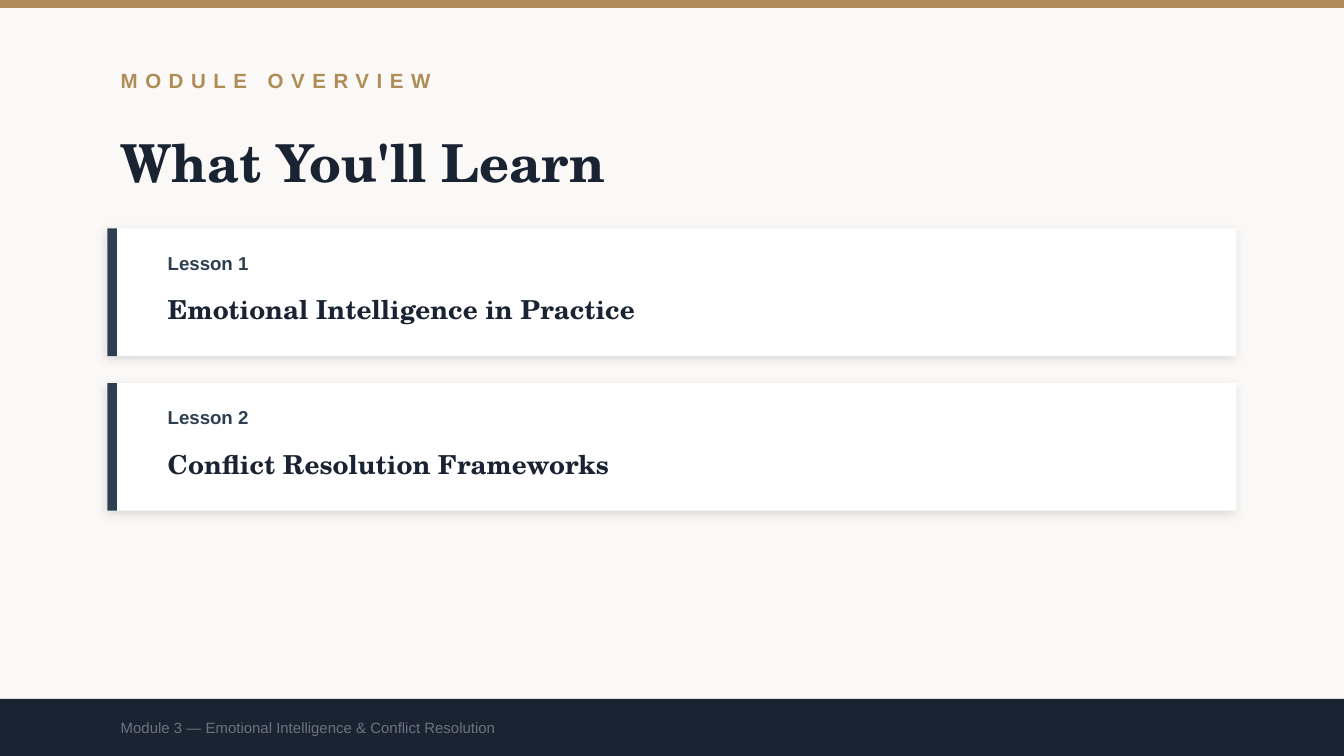
from typing import NamedTuple

import pptx
import pptx.dml.color
import pptx.enum.shapes
import pptx.enum.text
import pptx.oxml
import pptx.oxml.ns
import pptx.util

RGBColor = pptx.dml.color.RGBColor

PX = 4572  # EMU per px, 200 px to the inch
SLIDE_W, SLIDE_H = 2000, 1125
MARGIN = 160
TEXT_W = 1600
CARD_TOP, CARD_W, CARD_H, CARD_GAP = 340, 1680, 190, 40
ACCENT_W = 14
FOOTER_TOP = 1040

CREAM = RGBColor(0xFA, 0xF9, 0xF7)
GOLD = RGBColor(0xB0, 0x8D, 0x57)
NAVY = RGBColor(0x1A, 0x23, 0x32)
SLATE = RGBColor(0x2C, 0x3E, 0x50)
GRAY = RGBColor(0x6B, 0x72, 0x80)
WHITE = RGBColor(0xFF, 0xFF, 0xFF)

SANS = "Arial"
SERIF = "TeX Gyre Schola"


class Box(NamedTuple):
    left: int
    top: int
    width: int
    height: int

    def emu(self) -> list[int]:
        return [v * PX for v in self]


class Lesson(NamedTuple):
    label: str
    title: str


LESSONS = [
    Lesson("Lesson 1", "Emotional Intelligence in Practice"),
    Lesson("Lesson 2", "Conflict Resolution Frameworks"),
]


def add_rect(slide, box: Box, color: RGBColor):
    s = slide.shapes.add_shape(pptx.enum.shapes.MSO_SHAPE.RECTANGLE, *box.emu())
    s.fill.solid()
    s.fill.fore_color.rgb = color
    s.line.fill.background()
    s.shadow.inherit = False
    return s


def add_soft_shadow(s) -> None:
    """Give the shape a faint black shadow: 6 pt blur, 2 pt away."""
    effects = s._element.spPr.find(pptx.oxml.ns.qn("a:effectLst"))
    effects.append(pptx.oxml.parse_xml(
        f'<a:outerShdw {pptx.oxml.ns.nsdecls("a")} blurRad="{pptx.util.Pt(6)}" '
        f'dist="{pptx.util.Pt(2)}" dir="{135 * 60000}" algn="bl" rotWithShape="0">'
        '<a:srgbClr val="000000"><a:alpha val="12000"/></a:srgbClr></a:outerShdw>'))


def add_text(slide, text: str, box: Box, *, size: int, color: RGBColor,
             font: str = SANS, bold: bool = True, spacing: int = 0) -> None:
    """Add one line of text; spacing is the letter spacing in points."""
    tf = slide.shapes.add_textbox(*box.emu()).text_frame
    tf.word_wrap = True
    tf.vertical_anchor = pptx.enum.text.MSO_ANCHOR.MIDDLE
    r = tf.paragraphs[0].add_run()
    r.text = text
    r.font.name = font
    r.font.size = pptx.util.Pt(size)
    r.font.bold = bold
    r.font.color.rgb = color
    if spacing:
        r._r.get_or_add_rPr().set("spc", str(spacing * 100))


def add_card(slide, lesson: Lesson, top: int) -> None:
    add_soft_shadow(add_rect(slide, Box(MARGIN, top, CARD_W, CARD_H), WHITE))
    add_rect(slide, Box(MARGIN, top, ACCENT_W, CARD_H), SLATE)
    left = MARGIN + 70
    add_text(slide, lesson.label, Box(left, top + 16, 1400, 70), size=10, color=SLATE)
    add_text(slide, lesson.title, Box(left, top + 80, 1560, 80),
             size=14, color=NAVY, font=SERIF)


def main() -> None:
    prs = pptx.Presentation()
    prs.slide_width, prs.slide_height = SLIDE_W * PX, SLIDE_H * PX
    slide = prs.slides.add_slide(prs.slide_layouts[6])
    slide.background.fill.solid()
    slide.background.fill.fore_color.rgb = CREAM

    add_rect(slide, Box(0, 0, SLIDE_W, 12), GOLD)
    add_text(slide, "MODULE OVERVIEW", Box(MARGIN, 80, TEXT_W, 80),
             size=11, color=GOLD, spacing=4)
    add_text(slide, "What You'll Learn", Box(MARGIN, 180, TEXT_W, 120),
             size=28, color=NAVY, font=SERIF)

    for i, lesson in enumerate(LESSONS):
        add_card(slide, lesson, CARD_TOP + i * (CARD_H + CARD_GAP))

    footer_h = SLIDE_H - FOOTER_TOP
    add_rect(slide, Box(0, FOOTER_TOP, SLIDE_W, footer_h), NAVY)
    add_text(slide, "Module 3 — Emotional Intelligence & Conflict Resolution",
             Box(MARGIN, FOOTER_TOP, TEXT_W, footer_h), size=8, color=GRAY, bold=False)
    prs.save("out.pptx")


if __name__ == "__main__":
    main()
